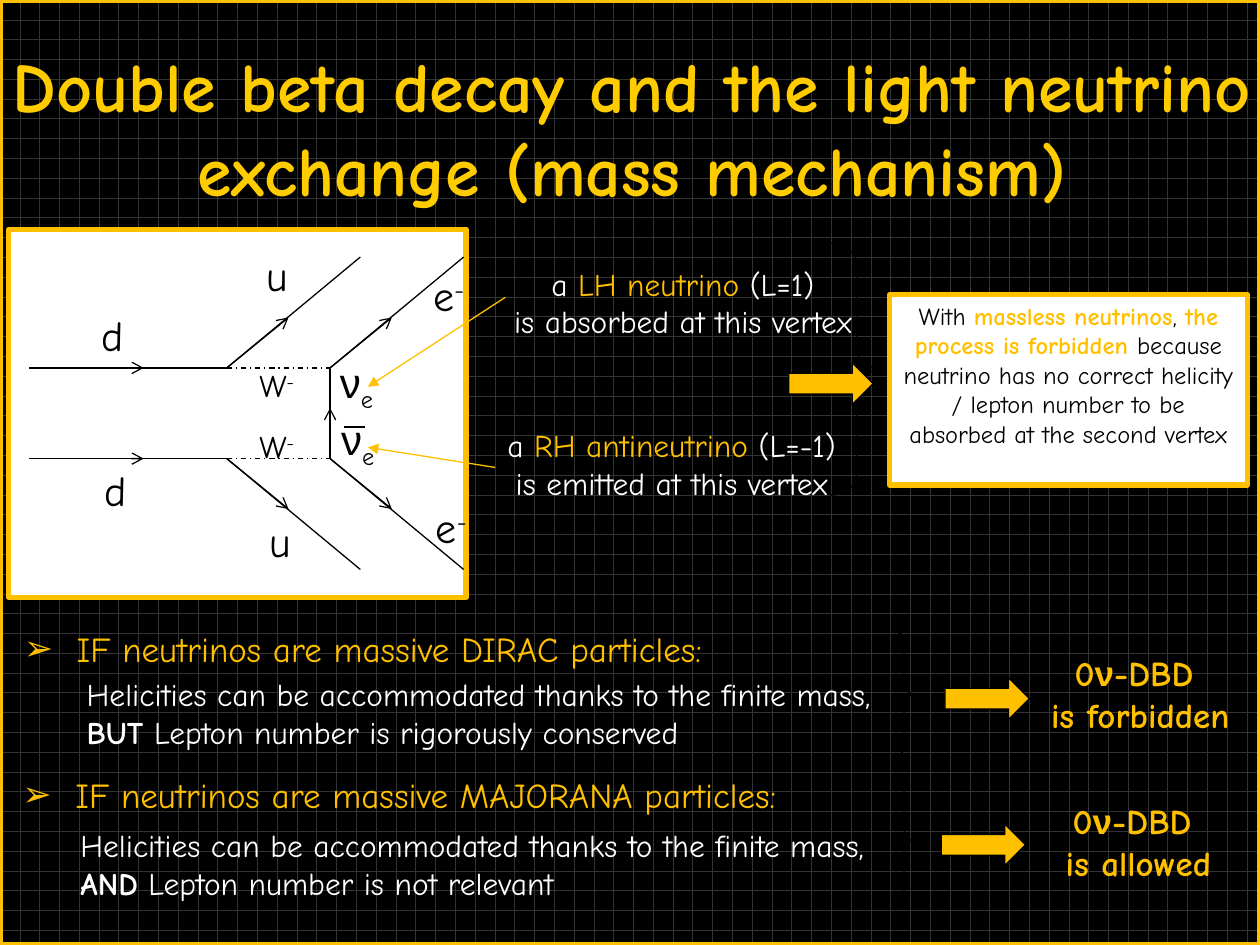
from lxml import etree
from pptx import Presentation
from pptx.dml.color import RGBColor
from pptx.enum import dml, shapes, text
from pptx.oxml.ns import qn
from pptx.util import Inches, Pt

BLACK = RGBColor(0x00, 0x00, 0x00)
WHITE = RGBColor(0xFF, 0xFF, 0xFF)
GRID = RGBColor(0x33, 0x33, 0x33)
GOLD = RGBColor(0xFF, 0xC0, 0x00)
TITLE_GOLD = RGBColor(0xFF, 0xCC, 0x00)
FONT = "Comic Neue"
SHAPE = shapes.MSO_SHAPE
CENTER = text.PP_ALIGN.CENTER


def fill_paragraph(paragraph, runs, color, size, bold=False, align=None):
    paragraph.alignment = align
    for words, changes in runs:
        run = paragraph.add_run()
        run.text = words
        style = {"name": FONT, "size": Pt(size), "bold": bold, "color": color} | changes
        run.font.color.rgb = style.pop("color")
        baseline = style.pop("baseline", None)
        for attribute, value in style.items():
            setattr(run.font, attribute, value)
        if baseline:
            run._r.get_or_add_rPr().set("baseline", str(baseline * 1000))


def write(slide, left, top, width, height, lines, color, size, wrap=False, **options):
    box = slide.shapes.add_textbox(Inches(left), Inches(top), Inches(width), Inches(height))
    frame = box.text_frame
    frame.word_wrap = wrap
    for index, runs in enumerate(lines):
        paragraph = frame.paragraphs[0] if index == 0 else frame.add_paragraph()
        fill_paragraph(paragraph, runs, color, size, **options)
    return frame


def draw(slide, kind, left, top, width, height, fill=None, line=BLACK, weight=0.75):
    shape = slide.shapes.add_shape(
        kind, Inches(left), Inches(top), Inches(width), Inches(height))
    shape.shadow.inherit = False
    if fill is None:
        shape.fill.background()
    else:
        shape.fill.solid()
        shape.fill.fore_color.rgb = fill
    shape.line.color.rgb = line
    shape.line.width = Pt(weight)
    return shape


def draw_line(slide, x1, y1, x2, y2, color=BLACK, head=None, dash=None):
    line = slide.shapes.add_connector(
        shapes.MSO_CONNECTOR.STRAIGHT, Inches(x1), Inches(y1), Inches(x2), Inches(y2))
    line.line.color.rgb = color
    line.line.width = Pt(0.75)
    if dash:
        line.line.dash_style = dash
    if head:
        etree.SubElement(line.line._get_or_add_ln(), qn("a:tailEnd"), type=head)
    etree.SubElement(line._element.spPr, qn("a:effectLst"))


def draw_block_arrow(slide, left, top):
    draw(slide, SHAPE.RIGHT_ARROW, left, top, 0.67, 0.33, GOLD)


def draw_brace(slide, left, top, width, height, curve):
    brace = draw(slide, SHAPE.RIGHT_BRACE, left, top, width, height)
    brace.adjustments[0] = curve


def add_background(slide):
    fill = slide.background.fill
    fill.patterned()
    fill.pattern = dml.MSO_PATTERN.DOTTED_GRID
    fill.fore_color.rgb = GRID
    fill.back_color.rgb = BLACK
    draw(slide, SHAPE.RECTANGLE, 0, 0, 10, 7.5, None, GOLD, 3)


def add_title(slide, left, top, width, height):
    title = "Double beta decay and the light neutrino exchange (mass mechanism)"
    write(slide, left, top, width, height, [[(title, {})]], TITLE_GOLD, 40,
          wrap=True, bold=True, align=CENTER)


def add_diagram(slide, left, top, width, height):
    draw(slide, SHAPE.RECTANGLE, left, top, width, height, WHITE, GOLD, 3)
    quark_x, lepton_x = left + 1.73, left + 2.55
    upper, lower = top + 1.1, top + 1.82
    for y, direction in ((upper, -1), (lower, 1)):
        draw_line(slide, left + 0.16, y, quark_x, y)
        draw_line(slide, left + 0.66, y, left + 1.07, y, head="arrow")
        draw_line(slide, quark_x, y, lepton_x, y, dash=dml.MSO_LINE.DASH_DOT)
        for x in (quark_x, lepton_x):
            draw_line(slide, x, y, x + 1.06, y + direction * 0.88)
            draw_line(slide, x, y, x + 0.49, y + direction * 0.4, head="arrow")
    draw_line(slide, lepton_x, upper, lepton_x, lower)
    draw_line(slide, lepton_x, top + 1.58, lepton_x, top + 1.42, head="arrow")

    down = [("d", {})]
    up = [("u", {})]
    electron = [("e", {}), ("-", {"baseline": 30})]
    boson = [("W", {}), ("-", {"baseline": 30})]
    neutrino = [("ν", {"name": "Arial"}), ("e", {"baseline": -25})]
    labels = (
        (down, 24, 0.38, 0.51, ((0.64, 0.59), (0.66, 1.82))),
        (up, 24, 0.37, 0.5, ((1.95, 0.11), (1.97, 2.22))),
        (electron, 24, 0.45, 0.51, ((3.27, 0.27), (3.29, 2.11))),
        (boson, 18, 0.51, 0.4, ((1.89, 1.04), (1.89, 1.52))),
        (neutrino, 24, 0.5, 0.5, ((2.53, 0.96), (2.54, 1.41))),
    )
    for runs, size, label_width, label_height, places in labels:
        for x, y in places:
            write(slide, left + x, top + y, label_width, label_height, [runs], BLACK, size)
    draw_line(slide, left + 2.66, top + 1.57, left + 2.83, top + 1.57)


def add_vertex_note(slide, left, top, width, particle, number, action, pointer):
    lines = [[("a ", {}), (particle, {"color": GOLD}), (number, {})],
             [(f"is {action} at this vertex", {})]]
    write(slide, left, top, width, 0.71, lines, WHITE, 18, align=CENTER)
    draw_line(slide, *pointer, color=GOLD, head="triangle")


def add_conclusion(slide, left, top, width, height):
    draw_brace(slide, left - 0.47, top - 0.41, 0.42, 2, 0.4)
    panel = draw(slide, SHAPE.RECTANGLE, left, top, width, height, WHITE, GOLD, 3)
    frame = panel.text_frame
    frame.word_wrap = True
    frame.vertical_anchor = text.MSO_ANCHOR.TOP
    strong = {"color": GOLD, "bold": True}
    runs = [("With ", {}), ("massless neutrinos", strong), (", ", {}),
            ("the process is forbidden ", strong),
            ("because neutrino has no correct helicity / lepton number "
             "to be absorbed at the second vertex", {})]
    fill_paragraph(frame.paragraphs[0], runs, BLACK, 14, align=CENTER)
    draw_block_arrow(slide, left - 0.8, top + 0.54)


def add_case(slide, left, top, kind, body, stress, statement, arrow, verdict, outcome):
    heading = write(slide, left, top, 6.91, 0.44,
                    [[(f"IF neutrinos are massive {kind} particles:", {})]],
                    GOLD, 20, wrap=True)
    properties = heading.paragraphs[0]._p.get_or_add_pPr()
    properties.set("marL", str(Inches(0.42)))
    properties.set("indent", str(-Inches(0.42)))
    color = etree.SubElement(properties, qn("a:buClr"))
    etree.SubElement(color, qn("a:srgbClr"), val=str(GOLD))
    etree.SubElement(properties, qn("a:buFont"), typeface="Arial")
    etree.SubElement(properties, qn("a:buChar"), char="➢")

    lines = [[("Helicities can be accommodated thanks to the finite mass,", {})],
             [(stress, {"bold": True}), (statement, {})]]
    write(slide, *body, 7.1, 0.71, lines, WHITE, 18, wrap=True)
    draw_brace(slide, 7.09, top + 0.08, 0.17, 1, 0.5)
    draw_block_arrow(slide, *arrow)
    lines = [[("0", {}), ("ν", {"name": "Arial"}), ("-DBD ", {})], [(outcome, {})]]
    write(slide, *verdict, 0.77, lines, GOLD, 20, bold=True, align=CENTER)


def main():
    deck = Presentation()
    deck.slide_width, deck.slide_height = Inches(10), Inches(7.5)
    slide = deck.slides.add_slide(deck.slide_layouts[6])
    add_background(slide)
    add_diagram(slide, 0.07, 1.82, 3.63, 2.92)
    add_vertex_note(slide, 3.78, 2.05, 3.28, "LH neutrino", " (L=1)", "absorbed",
                    (4.01, 2.36, 2.92, 3.07))
    add_vertex_note(slide, 3.77, 3.33, 3.12, "RH antineutrino", " (L=-1)", "emitted",
                    (3.93, 3.71, 2.92, 3.55))
    add_case(slide, 0.09, 4.93, "DIRAC", (0.59, 5.31), "BUT",
             " Lepton number is rigorously conserved",
             (7.5, 5.38), (8.13, 5.12, 1.84), "is forbidden")
    add_case(slide, 0.08, 6.09, "MAJORANA", (0.54, 6.51), "AND",
             " Lepton number is not relevant",
             (7.47, 6.54), (8.27, 6.3, 1.53), "is allowed")
    add_title(slide, -0.15, 0.29, 10.33, 1.25)
    add_conclusion(slide, 7.06, 2.34, 2.84, 1.51)
    deck.save("out.pptx")


if __name__ == "__main__":
    main()
